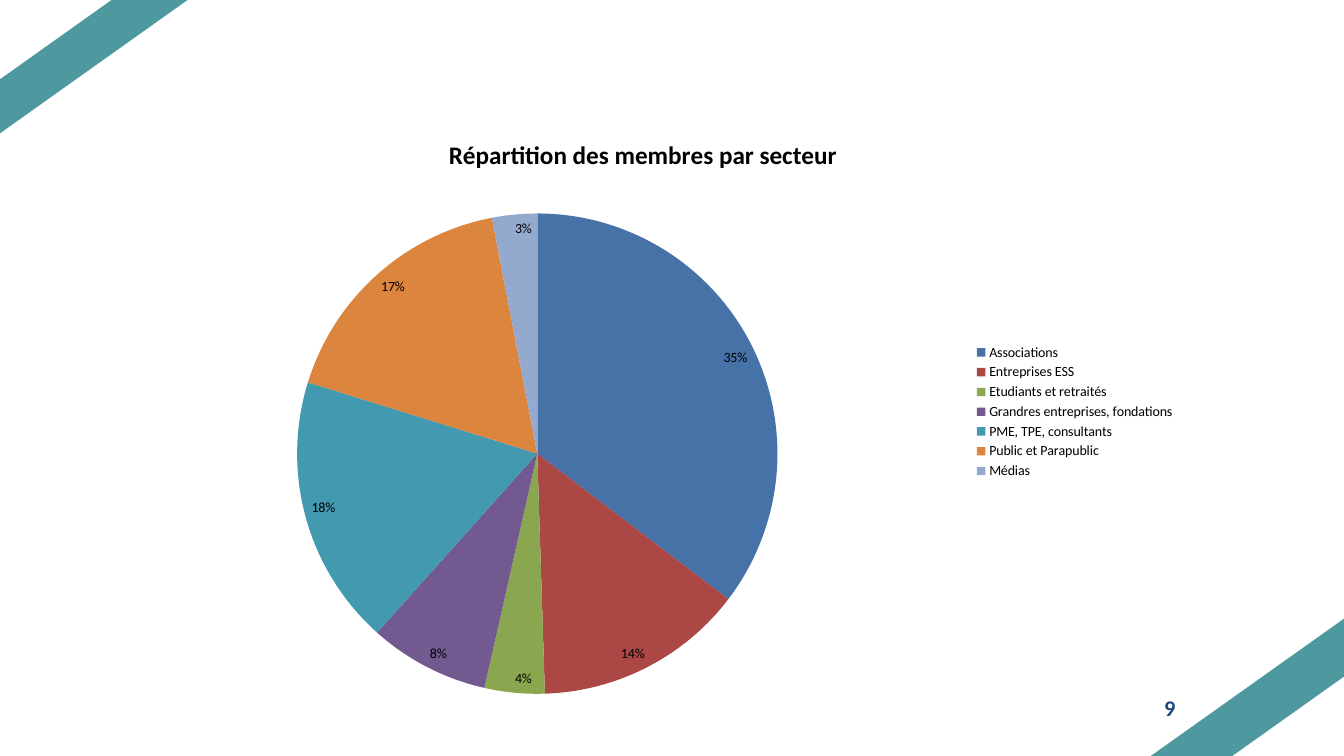
from dataclasses import dataclass

from lxml import etree
from pptx import Presentation
from pptx import util as u
from pptx.chart.data import CategoryChartData
from pptx.dml.color import RGBColor
from pptx.enum import chart as charts, shapes, text
from pptx.oxml.ns import qn


@dataclass(frozen=True)
class Theme:
    font: str = "Calibri"
    band: str = "4E98A0"
    ink: str = "000000"
    number: str = "1F497D"
    slices: tuple = ("4672A8", "AB4744", "8AA64F", "725990",
                     "4299B0", "DC853E", "93A9CE")
    title_size: int = 18
    number_size: int = 16
    chart_size: int = 10


THEME = Theme()
TITLE = "Répartition des membres par secteur"
SECTORS = {
    "Associations": 35,
    "Entreprises ESS": 14,
    "Etudiants et retraités": 4,
    "Grandres entreprises, fondations": 8,
    "PME, TPE, consultants": 18,
    "Public et Parapublic": 17,
    "Médias": 3,
}

# Boxes in centimetres: left, top, width, height
BANDS = [(-1.63, 0.71, 7.34, 1.04), (28.45, 16.97, 7.44, 1.12)]
BAND_ANGLE = 324.6
NUMBER_BOX = (21.97, 17.32, 7.9, 1.02)
CHART_BOX = (2.54, 2.92, 27.33, 14.91)
PIE_BOX = (7.48, 5.38, 12.1, 12.1)


def lengths(box):
    return [u.Cm(value) for value in box]


def style_font(font, size, color, bold=False):
    font.name = THEME.font
    font.size = u.Pt(size)
    font.bold = bold
    font.color.rgb = RGBColor.from_string(color)


def add_band(page, box):
    band = page.shapes.add_shape(shapes.MSO_SHAPE.RECTANGLE, *lengths(box))
    band.rotation = BAND_ANGLE
    band.shadow.inherit = False
    color = RGBColor.from_string(THEME.band)
    band.fill.solid()
    band.fill.fore_color.rgb = color
    band.line.color.rgb = color
    band.line.width = u.Pt(2)


def add_page_number(page, box, number):
    frame = page.shapes.add_textbox(*lengths(box)).text_frame
    frame.word_wrap = True
    frame.vertical_anchor = text.MSO_ANCHOR.MIDDLE
    para = frame.paragraphs[0]
    para.alignment = text.PP_ALIGN.RIGHT
    span = para.add_run()
    span.text = str(number)
    style_font(span.font, THEME.number_size, THEME.number, bold=True)


def place_plot(chart, box, plot_box):
    """Fix the plot area inside the chart, as fractions of the chart box."""
    left, top, width, height = box
    plot_left, plot_top, plot_width, plot_height = plot_box
    settings = {
        "layoutTarget": "inner", "xMode": "edge", "yMode": "edge",
        "x": round((plot_left - left) / width, 3),
        "y": round((plot_top - top) / height, 3),
        "w": round(plot_width / width, 3),
        "h": round(plot_height / height, 3),
    }
    area = chart.element.find(".//" + qn("c:plotArea"))
    layout = area.find(qn("c:layout"))
    if layout is None:
        layout = etree.Element(qn("c:layout"))
        area.insert(0, layout)
    manual = etree.SubElement(layout, qn("c:manualLayout"))
    for name, value in settings.items():
        etree.SubElement(manual, qn("c:" + name)).set("val", str(value))


def add_sector_chart(page, box, plot_box):
    data = CategoryChartData()
    data.categories = list(SECTORS)
    data.add_series(TITLE, list(SECTORS.values()))
    chart = page.shapes.add_chart(
        charts.XL_CHART_TYPE.PIE, *lengths(box), data).chart
    style_font(chart.font, THEME.chart_size, THEME.ink)

    # Title
    chart.has_title = True
    chart.chart_title.include_in_layout = False
    span = chart.chart_title.text_frame.paragraphs[0].add_run()
    span.text = TITLE
    style_font(span.font, THEME.title_size, THEME.ink, bold=True)

    # Legend
    chart.has_legend = True
    chart.legend.position = charts.XL_LEGEND_POSITION.RIGHT
    chart.legend.include_in_layout = False
    style_font(chart.legend.font, THEME.chart_size, THEME.ink)

    # Slices and their percentages
    plot = chart.plots[0]
    plot.vary_by_categories = True
    for index, color in enumerate(THEME.slices):
        fill = plot.series[0].points[index].format.fill
        fill.solid()
        fill.fore_color.rgb = RGBColor.from_string(color)
    plot.has_data_labels = True
    labels = plot.data_labels
    labels.show_value = False
    labels.show_percentage = True
    labels.number_format = "0%"
    labels.number_format_is_linked = False
    labels.position = charts.XL_LABEL_POSITION.INSIDE_END
    style_font(labels.font, THEME.chart_size, THEME.ink)
    place_plot(chart, box, plot_box)


def main():
    deck = Presentation()
    deck.slide_width, deck.slide_height = u.Cm(33.87), u.Cm(19.05)
    page = deck.slides.add_slide(deck.slide_layouts[6])
    for box in BANDS:
        add_band(page, box)
    add_page_number(page, NUMBER_BOX, 9)
    add_sector_chart(page, CHART_BOX, PIE_BOX)
    deck.save("out.pptx")


if __name__ == "__main__":
    main()
